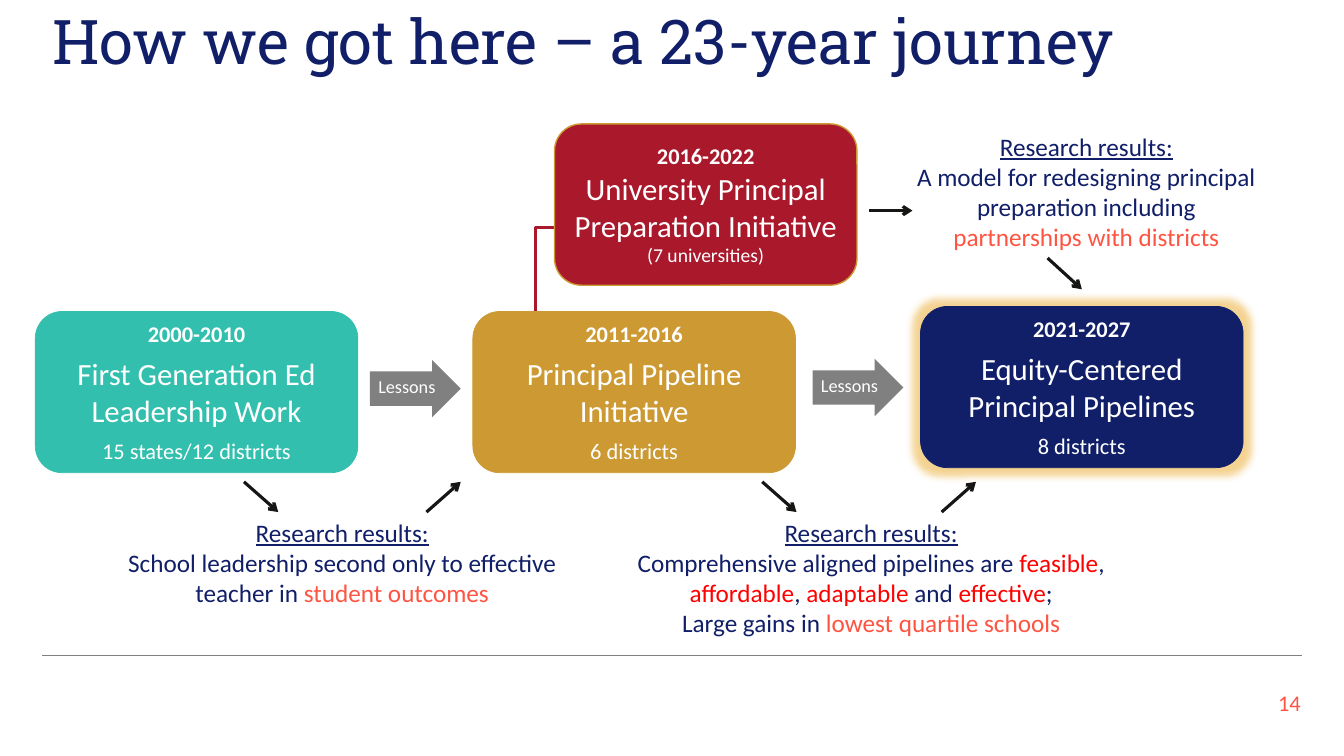
from lxml import etree
from pptx import Presentation, util as u
from pptx.dml.color import RGBColor
from pptx.enum import shapes, text
from pptx.oxml.ns import qn

COLORS = {
    "navy": "111F69", "teal": "32BFAD", "gold": "CC9933", "crimson": "AA182C",
    "coral": "FF5442", "red": "FF0000", "gray": "808080", "ink": "161615",
    "white": "FFFFFF", "glow": "EDB64A",
}


def rgb(name):
    return RGBColor.from_string(COLORS[name])


def add_span(para, words, size=18, color="navy", bold=False, underline=False, font="Calibri"):
    span = para.add_run()
    span.text = words
    span.font.name = font
    span.font.size = u.Pt(size)
    span.font.bold = bold
    span.font.underline = underline
    span.font.color.rgb = rgb(color)


class JourneySlide:
    """Holds the style and the current slide."""

    def __init__(self, deck):
        self.slide = deck.slides.add_slide(deck.slide_layouts[5])
        self.shapes = self.slide.shapes

    def frame(self, shape, anchor=text.MSO_ANCHOR.MIDDLE, side=0.1, edge=0.05):
        frame = shape.text_frame
        frame.word_wrap = True
        frame.auto_size = text.MSO_AUTO_SIZE.NONE
        frame.vertical_anchor = anchor
        frame.margin_left = frame.margin_right = u.Inches(side)
        frame.margin_top = frame.margin_bottom = u.Inches(edge)
        return frame

    def title(self, words, left, top, width, height):
        box = self.shapes.title
        box.left, box.top = u.Inches(left), u.Inches(top)
        box.width, box.height = u.Inches(width), u.Inches(height)
        para = self.frame(box).paragraphs[0]
        para.alignment = text.PP_ALIGN.LEFT
        para.line_spacing = 0.9
        add_span(para, words, size=44, font="Roboto Slab")

    def text_box(self, left, top, width, height, align=text.PP_ALIGN.CENTER, **layout):
        box = self.shapes.add_textbox(*map(u.Inches, (left, top, width, height)))
        para = self.frame(box, **layout).paragraphs[0]
        para.alignment = align
        return box, para

    def preset(self, kind, left, top, width, height, fill):
        shape = self.shapes.add_shape(kind, *map(u.Inches, (left, top, width, height)))
        shape.shadow.inherit = False
        shape.fill.solid()
        shape.fill.fore_color.rgb = rgb(fill)
        shape.line.fill.background()
        return shape

    def phase(self, left, top, fill, lines, width=3.2, border=None, gap=6, side=0.1):
        """Rounded box; lines are the years, the programme and its reach."""
        box = self.preset(shapes.MSO_SHAPE.ROUNDED_RECTANGLE, left, top, width, 1.6, fill)
        box.line.color.rgb = rgb(border or fill)
        box.line.width = u.Pt(1 if border else 0.5)
        frame = self.frame(box, side=side)
        for index, (words, size) in enumerate(lines):
            para = frame.paragraphs[0] if index == 0 else frame.add_paragraph()
            para.alignment = text.PP_ALIGN.CENTER
            if index:
                para.space_before = u.Pt(gap)
            add_span(para, words, size=size, color="white", bold=index == 0)
        return box

    def glow(self, shape, color, points, alpha):
        effects = shape._element.spPr.find(qn("a:effectLst"))
        halo = etree.SubElement(effects, qn("a:glow"), rad=str(u.Pt(points)))
        tint = etree.SubElement(halo, qn("a:srgbClr"), val=COLORS[color])
        etree.SubElement(tint, qn("a:alpha"), val=str(alpha * 1000))

    def lessons(self, left, top):
        arrow = self.preset(shapes.MSO_SHAPE.RIGHT_ARROW, left, top, 0.9, 0.57, "gray")
        arrow.adjustments[0] = 0.6
        arrow.adjustments[1] = 0.5
        para = self.text_box(left, top + 0.11, 0.73, 0.34, side=0, edge=0)[1]
        para.line_spacing = 0.9
        add_span(para, "Lessons", size=13, color="white")

    def results(self, left, top, width, height, *paragraphs):
        """Underlined heading, then paragraphs made of (words, color) pairs."""
        box, heading = self.text_box(left, top, width, height, anchor=text.MSO_ANCHOR.TOP)
        add_span(heading, "Research results:", underline=True)
        for pieces in paragraphs:
            para = box.text_frame.add_paragraph()
            para.alignment = text.PP_ALIGN.CENTER
            for words, color in pieces:
                add_span(para, words, color=color)

    def line(self, start, end, color, width, kind=shapes.MSO_CONNECTOR.STRAIGHT):
        line = self.shapes.add_connector(kind, *map(u.Inches, (*start, *end)))
        line.line.color.rgb = rgb(color)
        line.line.width = u.Pt(width)
        etree.SubElement(line._element.spPr, qn("a:effectLst"))
        return line

    def arrow(self, start, end):
        line = self.line(start, end, "ink", 2.25)
        etree.SubElement(line.line._get_or_add_ln(), qn("a:tailEnd"), type="arrow")

    def elbow(self, start, end, color):
        """One-bend connector, turned a quarter so that it rises, then goes right."""
        line = self.line(start, end, color, 2.25, shapes.MSO_CONNECTOR.ELBOW)
        properties = line._element.spPr
        properties.find(qn("a:prstGeom")).set("prst", "bentConnector2")
        properties.find(qn("a:xfrm")).set("rot", str(90 * 60000))


def main():
    deck = Presentation()
    deck.slide_width, deck.slide_height = u.Inches(13.33), u.Inches(7.5)
    page = JourneySlide(deck)

    # Title, footer rule and page number
    page.title("How we got here – a 23-year journey", 0.42, 0.04, 12.49, 0.8)
    page.line((0.42, 6.5), (12.91, 6.5), "gray", 0.9)
    number = page.text_box(12.28, 6.77, 0.72, 0.4, align=text.PP_ALIGN.RIGHT)[1]
    add_span(number, "14", size=16, color="coral")

    # Phases of the work
    page.elbow((6, 2.94), (4.89, 2.68), "crimson")
    page.phase(0.35, 3.09, "teal", [
        ("2000-2010", 16), ("First Generation Ed Leadership Work", 22),
        ("15 states/12 districts", 16)], side=0)
    page.phase(4.69, 3.09, "gold", [
        ("2011-2016", 16), ("Principal Pipeline Initiative", 22), ("6 districts", 16)])
    equity = page.phase(9.13, 3.04, "navy", [
        ("2021-2027", 16), ("Equity-Centered Principal Pipelines", 22), ("8 districts", 16)])
    page.glow(equity, "glow", 11, 60)
    page.phase(5.5, 1.23, "crimson", [
        ("2016-2022", 16), ("University Principal Preparation Initiative", 22),
        ("(7 universities)", 14)], width=3, border="gold", gap=0)

    # Lessons carried forward
    page.lessons(3.67, 3.57)
    page.lessons(8.06, 3.56)

    # Research results
    page.results(0.88, 5.08, 5.03, 1.21, [
        ("School leadership second only to effective teacher in ", "navy"),
        ("student outcomes", "coral")])
    page.results(6.2, 5.08, 4.88, 1.51, [
        ("Comprehensive aligned pipelines are ", "navy"), ("feasible", "red"),
        (", ", "navy"), ("affordable", "red"), (", ", "navy"), ("adaptable ", "red"),
        ("and ", "navy"), ("effective", "red"), (";", "navy"),
    ], [("Large gains in ", "navy"), ("lowest quartile schools", "coral")])
    page.results(8.97, 1.25, 3.61, 1.31, [
        ("A model for redesigning principal preparation including ", "navy"),
        ("partnerships with districts", "coral")])

    # Arrows into and out of the results
    for left in (2.42, 7.56):
        page.arrow((left, 4.78), (left + 0.34, 5.08))
    for left in (4.23, 9.34):
        page.arrow((left, 5.08), (left + 0.34, 4.78))
    page.arrow((10.39, 2.56), (10.73, 2.87))
    page.arrow((8.62, 2.09), (9.05, 2.09))

    deck.save("out.pptx")


if __name__ == "__main__":
    main()
